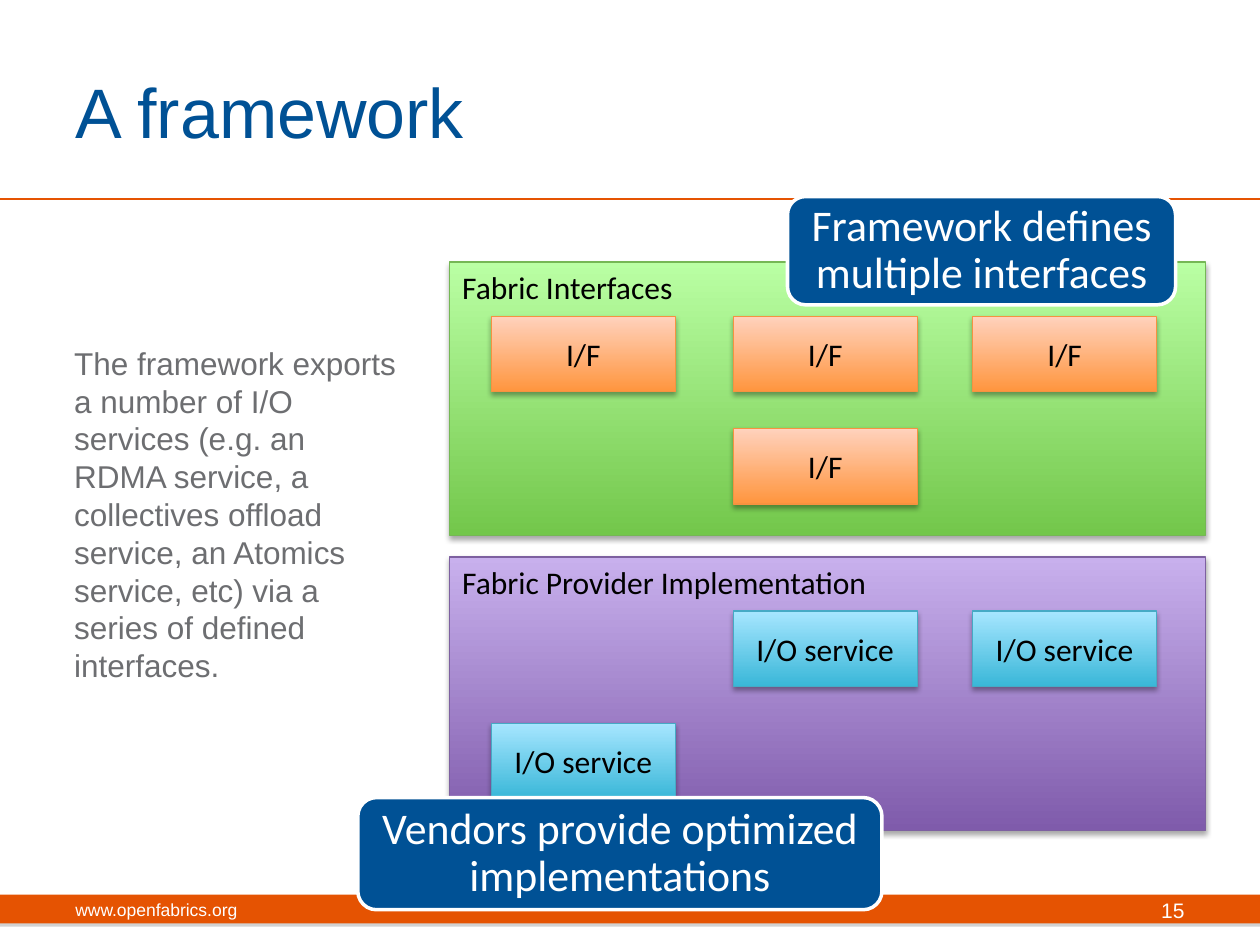
from dataclasses import dataclass

from lxml import etree
from pptx import Presentation
from pptx.dml.color import RGBColor
from pptx.enum import shapes, text
from pptx.oxml import ns
from pptx.util import Inches, Pt


@dataclass(frozen=True)
class Theme:
    heading_font: str = "Arial"
    diagram_font: str = "Calibri"
    blue: str = "005195"
    orange: str = "E55302"
    gray: str = "6D6E71"
    white: str = "FFFFFF"
    black: str = "000000"
    # Each palette: gradient bottom, gradient top, outline
    green_panel: tuple = ("73C74B", "BAFFA4", "75B755")
    purple_panel: tuple = ("7F5BAB", "C8B0ED", "7D60A0")
    interface: tuple = ("FF953E", "FFD2BD", "F69240")
    service: tuple = ("39B7D8", "A7E6FF", "46AAC5")
    title_size: int = 40
    callout_size: int = 25
    body_size: int = 18
    number_size: int = 12
    footer_size: int = 10


THEME = Theme()
ALIGN = text.PP_ALIGN
ANCHOR = text.MSO_ANCHOR
COLUMNS = (0.33, 2.25, 4.15)
ROWS = (0.43, 1.32)
BLOCK_SIZE = (1.46, 0.6)


def rgb(value):
    return RGBColor.from_string(value)


def write(shape, words, font, size, color, align=ALIGN.LEFT, anchor=ANCHOR.MIDDLE):
    frame = shape.text_frame
    frame.word_wrap = True
    frame.vertical_anchor = anchor
    paragraph = frame.paragraphs[0]
    paragraph.alignment = align
    run = paragraph.add_run()
    run.text = words
    run.font.name = font
    run.font.size = Pt(size)
    run.font.color.rgb = rgb(color)
    return paragraph


def add_label(slide, box, words, size, color, **layout):
    label = slide.shapes.add_textbox(*map(Inches, box))
    write(label, words, THEME.heading_font, size, color, **layout)


def add_box(slide, box, kind=shapes.MSO_SHAPE.RECTANGLE):
    shape = slide.shapes.add_shape(kind, *map(Inches, box))
    shape.shadow.inherit = False
    return shape


def add_drop_shadow(shape, color, blur):
    effects = shape.element.spPr.find(ns.qn("a:effectLst"))
    shadow = etree.SubElement(
        effects, ns.qn("a:outerShdw"), blurRad=str(Pt(blur)), dist=str(Pt(1.8)),
        dir="5400000", rotWithShape="0")
    tint = etree.SubElement(shadow, ns.qn("a:srgbClr"), val=color)
    etree.SubElement(tint, ns.qn("a:alpha"), val="35000")


def add_gradient_box(slide, box, palette, words, align, anchor):
    shape = add_box(slide, box)
    bottom, top, outline = palette
    shape.fill.gradient()
    shape.fill.gradient_angle = 90
    for stop, color in zip(shape.fill.gradient_stops, (bottom, top)):
        stop.color.rgb = rgb(color)
    shape.line.color.rgb = rgb(outline)
    shape.line.width = Pt(0.75)
    add_drop_shadow(shape, THEME.black, 3.1)
    write(shape, words, THEME.diagram_font, THEME.body_size, THEME.black, align, anchor)


def add_panel(slide, box, title, palette, block_text, block_palette, cells):
    """Draw a titled panel with blocks at the given (column, row) cells."""
    add_gradient_box(slide, box, palette, title, ALIGN.LEFT, ANCHOR.TOP)
    left, top = box[:2]
    for column, row in cells:
        block = (left + COLUMNS[column], top + ROWS[row], *BLOCK_SIZE)
        add_gradient_box(slide, block, block_palette, block_text,
                         ALIGN.CENTER, ANCHOR.MIDDLE)


def add_callout(slide, box, words):
    callout = add_box(slide, box, shapes.MSO_SHAPE.ROUNDED_RECTANGLE)
    callout.fill.solid()
    callout.fill.fore_color.rgb = rgb(THEME.blue)
    callout.line.color.rgb = rgb(THEME.white)
    callout.line.width = Pt(2)
    frame = callout.text_frame
    frame.margin_left = frame.margin_right = Inches(0.08)
    frame.margin_top = frame.margin_bottom = Inches(0)
    paragraph = write(callout, words, THEME.diagram_font, THEME.callout_size,
                      THEME.white, ALIGN.CENTER)
    paragraph.line_spacing = 0.9


def add_header(slide, box):
    left, top, width, height = box
    rule = slide.shapes.add_connector(
        shapes.MSO_CONNECTOR.STRAIGHT, Inches(left), Inches(top + height),
        Inches(left + width), Inches(top + height))
    rule.line.color.rgb = rgb(THEME.orange)
    rule.line.width = Pt(1)
    etree.SubElement(rule.element.spPr, ns.qn("a:effectLst"))
    add_label(slide, (left + 0.5, top + 0.25, 8.17, 1.25), "A framework",
              THEME.title_size, THEME.blue)


def add_footer(slide, box):
    left, top, width, height = box
    bar = add_box(slide, box)
    bar.fill.solid()
    bar.fill.fore_color.rgb = rgb(THEME.orange)
    bar.line.fill.background()
    add_drop_shadow(bar, "808080", 0)
    label_top = top - 0.08
    add_label(slide, (left + 0.5, label_top, 3.17, 0.4), "www.openfabrics.org",
              THEME.footer_size, THEME.white)
    add_label(slide, (left + width - 2.83, label_top, 2.33, 0.4), "15",
              THEME.number_size, THEME.white, align=ALIGN.RIGHT)


def main():
    presentation = Presentation()
    presentation.slide_width = Inches(10)
    presentation.slide_height = Inches(7.5)
    slide = presentation.slides.add_slide(presentation.slide_layouts[6])

    add_footer(slide, (0, 7.1, 10, 0.23))
    add_header(slide, (0, 0, 10, 1.58))
    add_panel(slide, (3.57, 2.08, 6, 2.17), "Fabric Interfaces", THEME.green_panel,
              "I/F", THEME.interface, ((1, 0), (0, 0), (2, 0), (1, 1)))
    add_panel(slide, (3.57, 4.42, 6, 2.17), "Fabric Provider Implementation",
              THEME.purple_panel, "I/O service", THEME.service,
              ((1, 0), (0, 1), (2, 0)))
    add_callout(slide, (6.25, 1.56, 3.08, 0.86), "Framework defines multiple interfaces")
    add_callout(slide, (2.84, 6.33, 4.16, 0.89),
                "Vendors provide optimized implementations")
    add_label(slide, (0.49, 2.68, 2.8, 2.83),
              "The framework exports a number of I/O services (e.g. an RDMA service, "
              "a collectives offload service, an Atomics service, etc) via a series "
              "of defined interfaces.",
              THEME.body_size, THEME.gray, anchor=ANCHOR.TOP)
    presentation.save("out.pptx")


if __name__ == "__main__":
    main()
